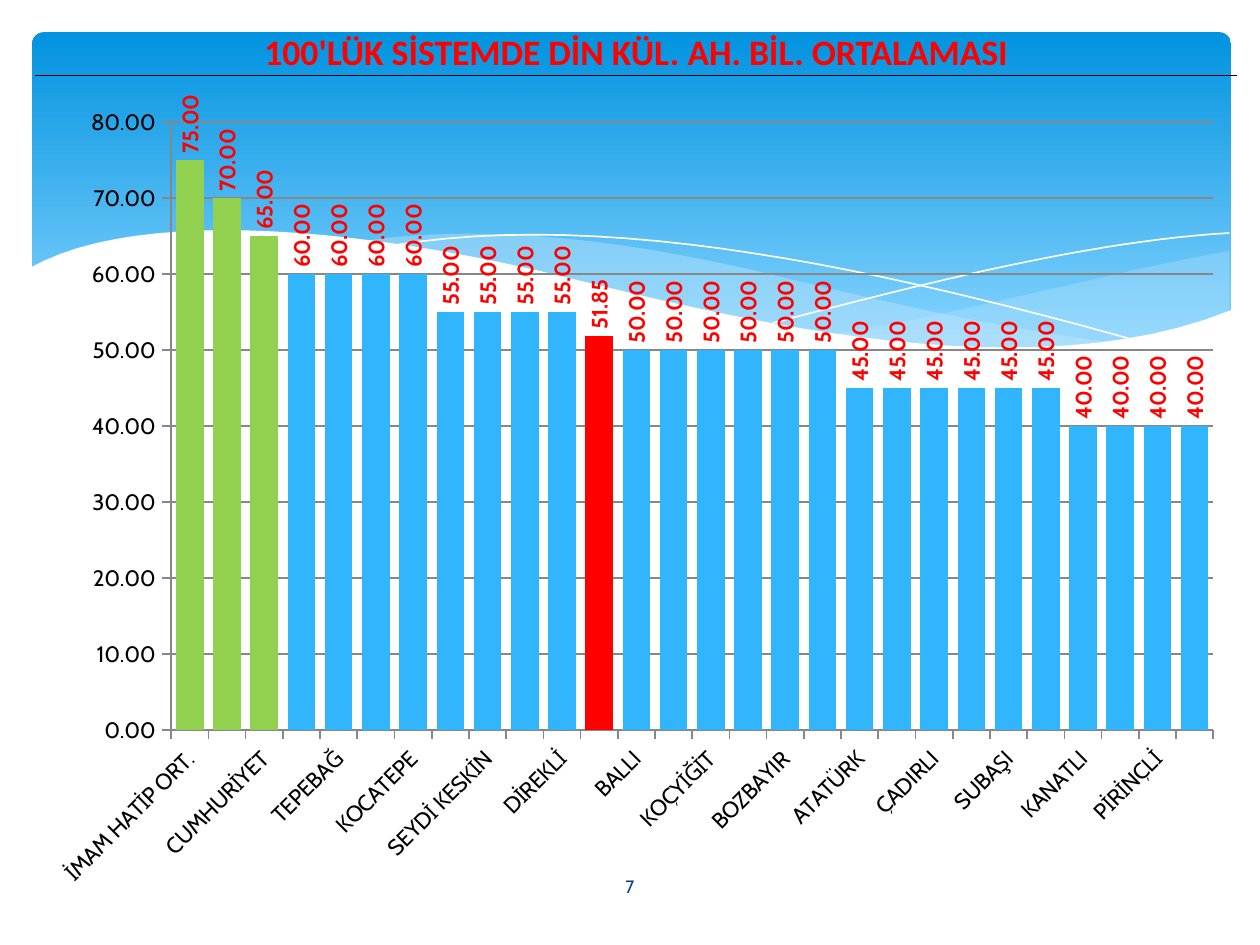
from math import comb
from lxml.etree import SubElement
from pptx import Presentation
from pptx.chart.data import CategoryChartData
from pptx.dml.color import RGBColor
from pptx.enum.chart import XL_CHART_TYPE, XL_LABEL_POSITION, XL_TICK_MARK
from pptx.enum.shapes import MSO_SHAPE
from pptx.enum.text import MSO_ANCHOR, PP_ALIGN
from pptx.oxml import parse_xml
from pptx.oxml.ns import nsdecls, qn
from pptx.util import Inches, Pt

UNIT = Inches(0.01)  # the slide is a grid of 784 columns by 588 rows
STEPS = 24  # straight pieces in each curved wave edge


def color(value):
    return RGBColor.from_string(value)


def style(font, formats):
    for name, value in formats.items():
        if name == "color":
            font.color.rgb = color(value)
        else:
            setattr(font, name, value)


deck = Presentation()
deck.slide_width, deck.slide_height = 784 * UNIT, 588 * UNIT
page = deck.slides.add_slide(deck.slide_layouts[6])
shapes = page.shapes

# Blue banner
banner = shapes.add_shape(MSO_SHAPE.ROUNDED_RECTANGLE, 20 * UNIT, 20 * UNIT, 746 * UNIT, 212 * UNIT)
banner.shadow.inherit = False
banner.adjustments[0] = 0.034
banner.line.fill.background()
banner.fill.gradient()
banner.fill.gradient_angle = 270
for stop, (position, shade) in zip(banner.fill.gradient_stops, [(0, "0293E0"), (0.9, "83D3FE")]):
    stop.position = position
    stop.color.rgb = color(shade)

# Waves: fill, opacity in percent, and Bézier edges; a wave without fill is a white line
waves = [
    ("C6E7FC", 29, [[(765, 156), (675, 173), (600, 195), (519, 208)],
                    [(519, 208), (590, 220), (680, 227), (765, 194)]]),
    ("C6E7FC", 40, [[(700, 214), (630, 206), (560, 190), (493, 174)],
                    [(493, 174), (400, 151), (310, 138), (225, 150)],
                    [(225, 150), (275, 156), (310, 164), (352, 174)],
                    [(352, 174), (475, 203), (590, 230), (700, 214)]]),
    (None, 100, [[(243, 153), (380, 130), (550, 168), (711, 213)]]),
    (None, 100, [[(481, 201), (580, 175), (680, 150), (765, 145)]]),
    ("FFFFFF", 100, [[(18, 258), (18, 167)],
                     [(18, 167), (90, 126), (240, 145), (350, 172)],
                     [(350, 172), (460, 199), (640, 244), (766, 193)],
                     [(766, 193), (766, 258)]]),
]
for fill, opacity, edges in waves:
    points = []
    for edge in edges:
        degree = len(edge) - 1
        for step in range(STEPS + 1):
            share = step / STEPS
            weights = [comb(degree, k) * share**k * (1 - share)**(degree - k)
                       for k in range(degree + 1)]
            points.append([sum(weight * knot[side] for weight, knot in zip(weights, edge)) * UNIT
                           for side in range(2)])
    builder = shapes.build_freeform(*points[0])
    builder.add_line_segments(points[1:], close=fill is not None)
    wave = builder.convert_to_shape()
    wave.shadow.inherit = False
    if fill:
        wave.fill.solid()
        wave.fill.fore_color.rgb = color(fill)
        shade = wave.fill._xPr.find(qn("a:solidFill"))[0]
        SubElement(shade, qn("a:alpha"), val=str(opacity * 1000))
        wave.line.fill.background()
    else:
        wave.fill.background()
        wave.line.color.rgb = color("FFFFFF")
        wave.line.width = Pt(0)

# Page number
box = shapes.add_textbox(342 * UNIT, 536 * UNIT, 100 * UNIT, 31 * UNIT)
frame = box.text_frame
frame.word_wrap = True
frame.vertical_anchor = MSO_ANCHOR.MIDDLE
frame.margin_top = frame.margin_bottom = 4 * UNIT
frame.margin_left = frame.margin_right = 8 * UNIT

# Title in a one-cell table with a rule below
title = shapes.add_table(1, 1, 22 * UNIT, 18 * UNIT, 748 * UNIT, 29 * UNIT).table
title.first_row = title.horz_banding = False
cell = title.cell(0, 0)
cell.fill.background()
cell.vertical_anchor = MSO_ANCHOR.BOTTOM
cell.margin_left = cell.margin_right = cell.margin_top = UNIT
cell.margin_bottom = 0
borders = {side: '<a:{0} {1} w="0"><a:noFill/></a:{0}>' for side in ("lnL", "lnR", "lnT")}
borders["lnB"] = '<a:{0} {1} w="6350"><a:solidFill><a:srgbClr val="000000"/></a:solidFill></a:{0}>'
for index, (side, markup) in enumerate(borders.items()):
    cell._tc.get_or_add_tcPr().insert(index, parse_xml(markup.format(side, nsdecls("a"))))

# Wording of the page number and the title
for holder, wording, formats in [
    (frame, "7", {"size": Pt(8), "name": "Cabin", "color": "073E87"}),
    (cell.text_frame, "100'LÜK SİSTEMDE DİN KÜL. AH. BİL. ORTALAMASI",
     {"size": Pt(16), "name": "Calibri", "bold": True, "color": "FF0000"}),
]:
    para = holder.paragraphs[0]
    para.alignment = PP_ALIGN.CENTER
    span = para.add_run()
    span.text = wording
    style(span.font, formats)

# Column chart of school averages
schools = {
    75: ["İMAM HATİP ORT."], 70: ["M.AKİF"], 65: ["CUMHURİYET"],
    60: ["ÇATALTEPE", "TEPEBAĞ", "MAREV", "KOCATEPE"],
    55: ["ALANLI", "SEYDİ KESKİN", "AMBARLI", "DİREKLİ"],
    51.85: ["İLÇE ORTALAMASI"],
    50: ["BALLI", "YAVUZLAR", "KOÇYİĞİT", "TEPECİK", "BOZBAYIR", "DERİNSU"],
    45: ["ATATÜRK", "İNCESU", "ÇADIRLI", "KOVANLI MERKEZ", "SUBAŞI", "NAMIK KEMAL"],
    40: ["KANATLI", "BOYAKLI", "PİRİNÇLİ", "GÖKTAŞ"],
}
scores = [score for score, names in schools.items() for name in names]
data = CategoryChartData(number_format="0.00")
data.categories = [name for names in schools.values() for name in names]
data.add_series("Series 1", scores)
chart = shapes.add_chart(XL_CHART_TYPE.COLUMN_CLUSTERED, 22 * UNIT, 58 * UNIT,
                         748 * UNIT, 504 * UNIT, data).chart
chart.has_legend = chart.has_title = False
chart_text = {"size": Pt(10), "name": "Cabin", "color": "000000"}
style(chart.font, chart_text)

# Inner plot area as shares of the chart
shares = {"x": 0.113, "y": 0.036, "w": 0.867, "h": 0.75}
plot_area = chart._chartSpace.chart.plotArea
for old in plot_area.findall(qn("c:layout")):
    plot_area.remove(old)
places = "".join(f'<c:{key}Mode val="edge"/>' for key in "xy")
places += "".join(f'<c:{key} val="{share}"/>' for key, share in shares.items())
plot_area.insert(0, parse_xml(
    f'<c:layout {nsdecls("c")}><c:manualLayout><c:layoutTarget val="inner"/>'
    f'{places}</c:manualLayout></c:layout>'))

# Axes
scale = chart.value_axis
scale.minimum_scale, scale.maximum_scale, scale.major_unit = 0, 80, 10
scale.has_major_gridlines = True
for axis in (scale, chart.category_axis):
    axis.major_tick_mark = XL_TICK_MARK.OUTSIDE
    axis.minor_tick_mark = XL_TICK_MARK.NONE
    style(axis.tick_labels.font, chart_text)
for part in (scale, chart.category_axis, scale.major_gridlines):
    part.format.line.color.rgb = color("878787")
    part.format.line.width = Pt(0.75)
chart.category_axis._element.txPr.bodyPr.set("rot", "-2700000")

# Columns: the best three green, the district average red
plot = chart.plots[0]
plot.gap_width = 35
plot.vary_by_categories = False
series = plot.series[0]
series.invert_if_negative = False
series.format.fill.solid()
series.format.fill.fore_color.rgb = color("31B6FD")
for index, score in enumerate(scores):
    if score > 60 or score == 51.85:
        column = series.points[index].format.fill
        column.solid()
        column.fore_color.rgb = color("92D050" if score > 60 else "FF0000")

# Upright value labels
labels = series.data_labels
labels.show_value = True
labels.position = XL_LABEL_POSITION.OUTSIDE_END
style(labels.font, chart_text | {"bold": True, "color": "FF0000"})
labels._element.find(qn("c:txPr")).find(qn("a:bodyPr")).set("rot", "-5400000")
for numbers in (labels, scale.tick_labels):
    numbers.number_format = "0.00"
    numbers.number_format_is_linked = False

deck.save("out.pptx")
